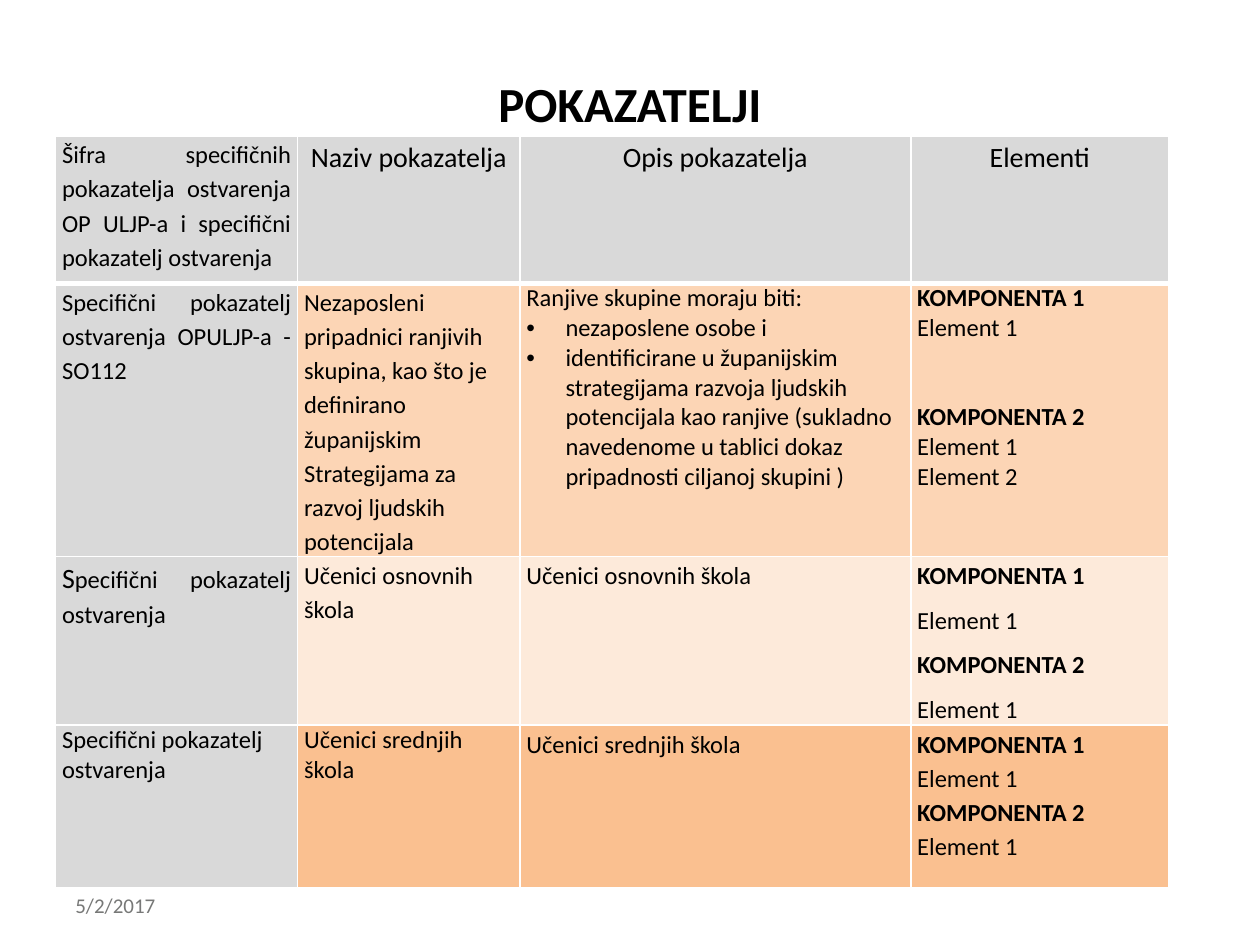
from dataclasses import dataclass

import lxml.etree
import pptx
import pptx.dml.color
import pptx.enum.text
import pptx.oxml.ns
import pptx.util

Cm = pptx.util.Cm
Pt = pptx.util.Pt
Align = pptx.enum.text.PP_ALIGN
Anchor = pptx.enum.text.MSO_ANCHOR
qn = pptx.oxml.ns.qn

COLORS = {
    "text": "000000",
    "date": "777877",
    "border": "FFFFFF",
    "grey": "D9D9D9",
    "peach": "FCD5B5",
    "cream": "FDEADA",
    "orange": "FAC090",
}
FONT = "Calibri"
COLUMN_WIDTHS = [4.88, 4.48, 7.88, 5.2]
ROW_HEIGHTS = [2.97, 5.51, 3.4, 3.28]
ROW_FILLS = ["grey", "peach", "cream", "orange"]


@dataclass
class Entry:
    lines: list
    align: int = Align.LEFT
    leading: float = 1.0
    gap: float = 0
    size: float = 14
    initial_size: float = 0
    group_gap: float = 0


def spaced(*lines, align=Align.LEFT, **options):
    return Entry(list(lines), align, 1.15, 3, **options)


def heading(text):
    return spaced(text, align=Align.CENTER, size=16)


ROWS = [
    [
        spaced("Šifra specifičnih pokazatelja ostvarenja OP ULJP-a i specifični "
               "pokazatelj ostvarenja", align=Align.JUSTIFY),
        heading("Naziv pokazatelja"),
        heading("Opis pokazatelja"),
        heading("Elementi"),
    ],
    [
        spaced("Specifični pokazatelj ostvarenja OPULJP-a - SO112", align=Align.JUSTIFY),
        spaced("Nezaposleni pripadnici ranjivih skupina, kao što je definirano "
               "županijskim Strategijama za razvoj ljudskih potencijala"),
        Entry([
            "Ranjive skupine moraju biti:",
            "• nezaposlene osobe i",
            "• identificirane u županijskim strategijama razvoja ljudskih potencijala "
            "kao ranjive (sukladno navedenome u tablici dokaz pripadnosti ciljanoj skupini )",
        ]),
        Entry(["KOMPONENTA 1", "Element 1", "KOMPONENTA 2", "Element 1", "Element 2"],
              group_gap=34),
    ],
    [
        spaced("Specifični pokazatelj ostvarenja", align=Align.JUSTIFY, initial_size=16),
        spaced("Učenici osnovnih škola"),
        spaced("Učenici osnovnih škola", align=Align.JUSTIFY),
        spaced("KOMPONENTA 1", "Element 1", "KOMPONENTA 2", "Element 1",
               align=Align.JUSTIFY),
    ],
    [
        Entry(["Specifični pokazatelj ostvarenja"]),
        Entry(["Učenici srednjih škola"]),
        Entry(["Učenici srednjih škola"], leading=1.15),
        Entry(["KOMPONENTA 1", "Element 1", "KOMPONENTA 2", "Element 1"], leading=1.15),
    ],
]


def rgb(name):
    return pptx.dml.color.RGBColor.from_string(COLORS[name])


def format_span(span, size, color="text", bold=False):
    span.font.name = FONT
    span.font.size = Pt(size)
    span.font.bold = bold
    span.font.color.rgb = rgb(color)


def add_bullet(para):
    properties = para._p.get_or_add_pPr()
    properties.set("marL", str(Cm(0.79)))
    properties.set("indent", str(-Cm(0.79)))
    font = lxml.etree.SubElement(properties, qn("a:buFont"))
    font.set("typeface", "Arial")
    bullet = lxml.etree.SubElement(properties, qn("a:buChar"))
    bullet.set("char", "•")


def add_borders(cell, top, bottom):
    properties = cell._tc.get_or_add_tcPr()
    for side, width in (("L", 1), ("R", 1), ("T", top), ("B", bottom)):
        line = lxml.etree.SubElement(properties, qn(f"a:ln{side}"))
        line.set("w", str(Pt(width)))
        fill = lxml.etree.SubElement(line, qn("a:solidFill"))
        lxml.etree.SubElement(fill, qn("a:srgbClr")).set("val", COLORS["border"])


def fill_cell(cell, entry):
    cell.margin_left = cell.margin_right = Cm(0.13)
    cell.margin_top = cell.margin_bottom = 0
    for index, line in enumerate(entry.lines):
        frame = cell.text_frame
        para = frame.paragraphs[0] if index == 0 else frame.add_paragraph()
        is_component = line.startswith("KOMPONENTA")
        para.alignment = entry.align
        para.line_spacing = entry.leading
        para.space_after = Pt(entry.gap)
        before = entry.group_gap if is_component and entry.group_gap else entry.gap
        para.space_before = Pt(before if index else 0)
        if line.startswith("• "):
            add_bullet(para)
            line = line[2:]
        if entry.initial_size:
            initial = para.add_run()
            initial.text, line = line[0], line[1:]
            format_span(initial, entry.initial_size)
        span = para.add_run()
        span.text = line
        format_span(span, entry.size, bold=is_component)


def add_indicator_table(page, left, top):
    table = page.shapes.add_table(
        len(ROWS), len(COLUMN_WIDTHS), Cm(left), Cm(top),
        Cm(sum(COLUMN_WIDTHS)), Cm(sum(ROW_HEIGHTS))).table
    table.first_row = table.horz_banding = False
    for column, width in zip(table.columns, COLUMN_WIDTHS):
        column.width = Cm(width)
    for row_index, entries in enumerate(ROWS):
        table.rows[row_index].height = Cm(ROW_HEIGHTS[row_index])
        for column_index, entry in enumerate(entries):
            cell = table.cell(row_index, column_index)
            add_borders(cell, 3 if row_index == 1 else 1, 3 if row_index == 0 else 1)
            cell.fill.solid()
            cell.fill.fore_color.rgb = rgb(ROW_FILLS[row_index] if column_index else "grey")
            fill_cell(cell, entry)


def add_label(page, left, top, width, height, text, size, align, color="text", bold=False):
    box = page.shapes.add_textbox(Cm(left), Cm(top), Cm(width), Cm(height))
    frame = box.text_frame
    frame.word_wrap = True
    frame.vertical_anchor = Anchor.MIDDLE
    frame.text = text
    para = frame.paragraphs[0]
    para.alignment = align
    format_span(para.runs[0], size, color, bold)


def main():
    deck = pptx.Presentation()
    deck.slide_width, deck.slide_height = Cm(25.4), Cm(19.05)
    page = deck.slides.add_slide(deck.slide_layouts[6])
    add_label(page, 1.27, 17.73, 5.92, 1.02, "5/2/2017", 12, Align.LEFT, "date")
    add_label(page, 1.27, 0.76, 22.86, 2.62, "POKAZATELJI", 28, Align.CENTER, bold=True)
    add_indicator_table(page, 1.12, 2.74)
    deck.save("out.pptx")


if __name__ == "__main__":
    main()
